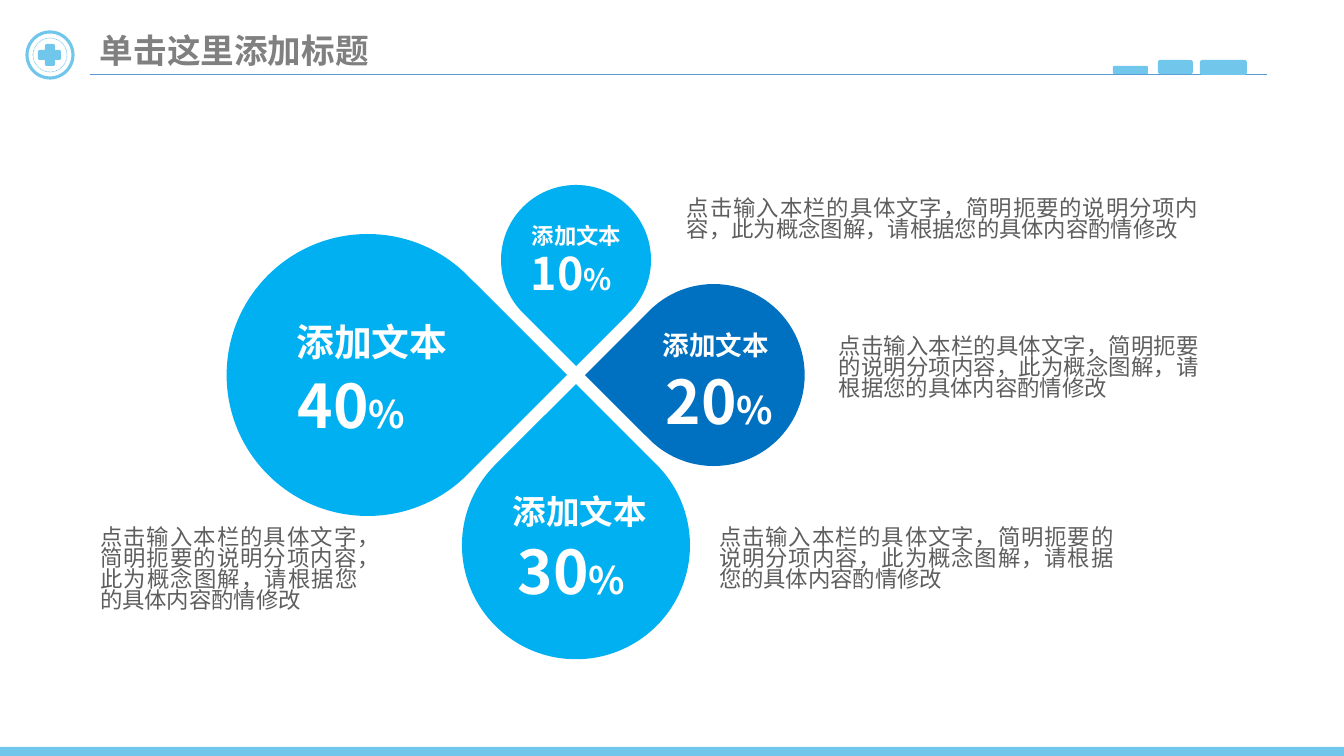
from dataclasses import dataclass
from math import sqrt
from lxml.etree import SubElement
from pptx import Presentation
from pptx.dml.color import RGBColor
from pptx.enum.dml import MSO_LINE
from pptx.enum.shapes import MSO_CONNECTOR, MSO_SHAPE
from pptx.enum.text import MSO_ANCHOR, PP_ALIGN
from pptx.oxml.ns import qn
from pptx.util import Pt


@dataclass(frozen=True)
class Theme:
    font: str = "Noto Sans CJK SC"
    trim: str = "70C6EB"
    rule: str = "5B9BD5"
    petal: str = "00B0F0"
    accent: str = "0070C0"
    white: str = "FFFFFF"
    title: str = "808080"
    body: str = "5E5E5E"
    title_size: int = 24
    body_size: int = 16
    body_leading: int = 15


theme = Theme()
PX = 914400 / 100.8


def add_block(kind, box, fill=None, line=None, width=0):
    shape = slide.shapes.add_shape(kind, *[round(v * PX) for v in box])
    shape.shadow.inherit = False
    if fill:
        shape.fill.solid()
        shape.fill.fore_color.rgb = RGBColor.from_string(fill)
    else:
        shape.fill.background()
    if line:
        shape.line.color.rgb = RGBColor.from_string(line)
        shape.line.width = Pt(width)
    else:
        shape.line.fill.background()
    return shape


def write_text(shape, runs, color, bold=True, align=PP_ALIGN.LEFT, inset=True, wrap=True, leading=None):
    frame = shape.text_frame
    frame.word_wrap = wrap
    frame.vertical_anchor = MSO_ANCHOR.TOP if leading else MSO_ANCHOR.MIDDLE
    if not inset:
        frame.margin_left = frame.margin_top = frame.margin_right = frame.margin_bottom = 0
    paragraph = frame.paragraphs[0]
    paragraph.alignment = align
    if leading:
        paragraph.line_spacing = Pt(leading)
    for text, size in runs:
        run = paragraph.add_run()
        run.text = text
        run.font.size = Pt(size)
        run.font.bold = bold
        run.font.name = theme.font
        run.font.color.rgb = RGBColor.from_string(color)
        SubElement(run.font._element, qn("a:ea")).set("typeface", theme.font)


presentation = Presentation()
presentation.slide_width = round(1344 * PX)
presentation.slide_height = round(756 * PX)
slide = presentation.slides.add_slide(presentation.slide_layouts[6])

title = slide.shapes.add_textbox(*[round(v * PX) for v in (90, 25, 291, 50)])
write_text(title, [("单击这里添加标题", theme.title_size)], theme.title, wrap=False)

add_block(MSO_SHAPE.OVAL, (27, 32, 46, 46), line=theme.trim, width=2.25)
inner_ring = add_block(MSO_SHAPE.OVAL, (33, 38, 34, 34), line=theme.trim, width=0.5)
inner_ring.line.dash_style = MSO_LINE.ROUND_DOT

rule = slide.shapes.add_connector(
    MSO_CONNECTOR.STRAIGHT, *[round(v * PX) for v in (90, 74, 1267, 74)])
rule.line.color.rgb = RGBColor.from_string(theme.rule)
rule.line.width = Pt(0.5)
SubElement(rule._element.spPr, qn("a:effectLst"))

cross_bars = [(45, 44, 10, 22), (38, 50, 23, 10)]
header_bars = [(1113, 66, 35, 8), (1158, 60, 35, 14), (1200, 60, 47, 15)]
for box in cross_bars + header_bars:
    add_block(MSO_SHAPE.ROUNDED_RECTANGLE, box, theme.trim)
add_block(MSO_SHAPE.RECTANGLE, (0, 747, 1344, 9), theme.trim)

HUB_X, HUB_Y, HUB_GAP = 576, 375, 9
petals = [
    (-1, 0, 141, 45, theme.petal, (276, 319, 192, 45), 27, "40", (288, 363, 131, 83), 43, 27),
    (0, 1, 114, 315, theme.petal, (501, 491, 158, 40), 24, "30", (508, 529, 131, 83), 43, 27),
    (1, 0, 91, 225, theme.accent, (650, 329, 132, 32), 19, "20", (656, 359, 131, 83), 43, 27),
    (0, -1, 75, 135, theme.petal, (525, 222, 103, 27), 16, "10", (521, 241, 104, 64), 32, 21),
]
for dx, dy, radius, angle, color, label_box, label_size, value, value_box, value_size, unit_size in petals:
    reach = radius * sqrt(2) + HUB_GAP
    left, top = HUB_X + dx * reach - radius, HUB_Y + dy * reach - radius
    petal = add_block(MSO_SHAPE.TEAR, (left, top, 2 * radius, 2 * radius), color)
    petal.rotation = angle
    label = add_block(MSO_SHAPE.RECTANGLE, label_box, color)
    write_text(label, [("添加文本", label_size)], theme.white, align=PP_ALIGN.CENTER, inset=False)
    number = slide.shapes.add_textbox(*[round(v * PX) for v in value_box])
    write_text(number, [(value, value_size), ("%", unit_size)], theme.white, wrap=False)

description = "点击输入本栏的具体文字，简明扼要的说明分项内容，此为概念图解，请根据您的具体内容酌情修改"
for box in [(687, 200, 512, 42), (839, 338, 360, 63), (719, 529, 395, 63), (100, 529, 258, 84)]:
    note = slide.shapes.add_textbox(*[round(v * PX) for v in box])
    write_text(note, [(description, theme.body_size)], theme.body, bold=False,
               align=PP_ALIGN.JUSTIFY, inset=False, leading=theme.body_leading)

presentation.save("out.pptx")
